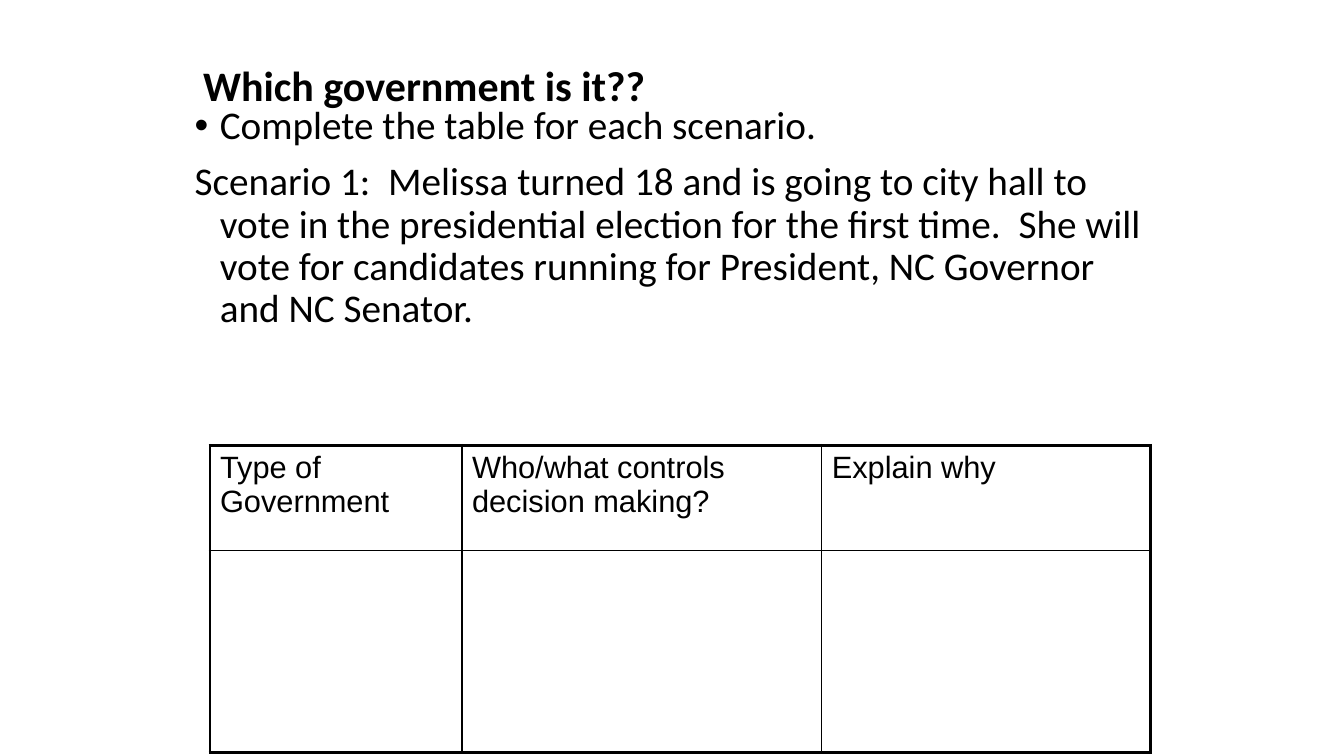
from lxml.etree import SubElement
from pptx import Presentation
from pptx.dml.color import RGBColor
from pptx.enum.text import MSO_ANCHOR
from pptx.oxml.ns import qn
from pptx.util import Pt

COLORS = {"ink": "000000"}
OUTER_LINE, INNER_LINE = Pt(2.25), Pt(1)
COLUMN_WIDTHS = (180, 257, 235)
ROW_HEIGHTS = (75.5, 144)

TITLE = "Which government is it??"
TASK = "Complete the table for each scenario."
SCENARIO = (
    "Scenario 1:  Melissa turned 18 and is going to city hall to vote in the "
    "presidential election for the first time.  She will vote for candidates "
    "running for President, NC Governor and NC Senator."
)
HEADINGS = ("Type of Government", "Who/what controls decision making?", "Explain why")


def add_run(paragraph, text, size, font_name, bold=False):
    run = paragraph.add_run()
    run.text = text
    run.font.size = Pt(size)
    run.font.name = font_name
    run.font.bold = bold
    run.font.color.rgb = RGBColor.from_string(COLORS["ink"])


def add_text_frame(slide, left, top, width, height, anchor):
    shape = slide.shapes.add_textbox(Pt(left), Pt(top), Pt(width), Pt(height))
    text_frame = shape.text_frame
    text_frame.word_wrap = True
    text_frame.vertical_anchor = anchor
    return text_frame


def add_title(slide, left, top, width, height):
    text_frame = add_text_frame(slide, left, top, width, height, MSO_ANCHOR.MIDDLE)
    paragraph = text_frame.paragraphs[0]
    paragraph.line_spacing = 0.9
    add_run(paragraph, TITLE, 30, "Calibri", bold=True)


def set_hanging_indent(paragraph, indent, bullet=None):
    properties = paragraph._p.get_or_add_pPr()
    properties.set("marL", str(Pt(indent)))
    properties.set("indent", str(-Pt(indent)))
    if bullet:
        SubElement(properties, qn("a:buFont"), typeface="Arial")
        SubElement(properties, qn("a:buChar"), char=bullet)
    else:
        SubElement(properties, qn("a:buNone"))


def add_instructions(slide, left, top, width, height):
    text_frame = add_text_frame(slide, left, top, width, height, MSO_ANCHOR.TOP)
    task = text_frame.paragraphs[0]
    scenario = text_frame.add_paragraph()
    scenario.space_before = Pt(10)
    for paragraph, text, bullet in ((task, TASK, "•"), (scenario, SCENARIO, None)):
        paragraph.line_spacing = 0.9
        set_hanging_indent(paragraph, 18, bullet)
        add_run(paragraph, text, 28, "Calibri")


def set_border(cell, side, width):
    properties = cell._tc.get_or_add_tcPr()
    line = SubElement(properties, qn(f"a:ln{side}"), w=str(width))
    fill = SubElement(line, qn("a:solidFill"))
    SubElement(fill, qn("a:srgbClr"), val=COLORS["ink"])


def add_answer_table(slide, left, top):
    rows, columns = len(ROW_HEIGHTS), len(COLUMN_WIDTHS)
    table = slide.shapes.add_table(
        rows, columns, Pt(left), Pt(top), Pt(sum(COLUMN_WIDTHS)), Pt(sum(ROW_HEIGHTS))
    ).table
    table.first_row = table.horz_banding = False
    for column, width in zip(table.columns, COLUMN_WIDTHS):
        column.width = Pt(width)
    for row, height in zip(table.rows, ROW_HEIGHTS):
        row.height = Pt(height)

    # Heavy frame around the table, thin rules inside
    for row in range(rows):
        for column in range(columns):
            cell = table.cell(row, column)
            on_frame = {
                "L": column == 0,
                "R": column == columns - 1,
                "T": row == 0,
                "B": row == rows - 1,
            }
            for side, outer in on_frame.items():
                set_border(cell, side, OUTER_LINE if outer else INNER_LINE)
            cell.fill.background()

    # Headings over the empty answer row
    for column, heading in enumerate(HEADINGS):
        paragraph = table.cell(0, column).text_frame.paragraphs[0]
        add_run(paragraph, heading, 22, "Arial")


def main():
    presentation = Presentation()
    presentation.slide_width = Pt(960)
    presentation.slide_height = Pt(540)
    slide = presentation.slides.add_slide(presentation.slide_layouts[6])
    add_title(slide, 138, 18, 672, 90)
    add_instructions(slide, 132, 72, 690, 324)
    add_answer_table(slide, 150, 318)
    presentation.save("out.pptx")


if __name__ == "__main__":
    main()
